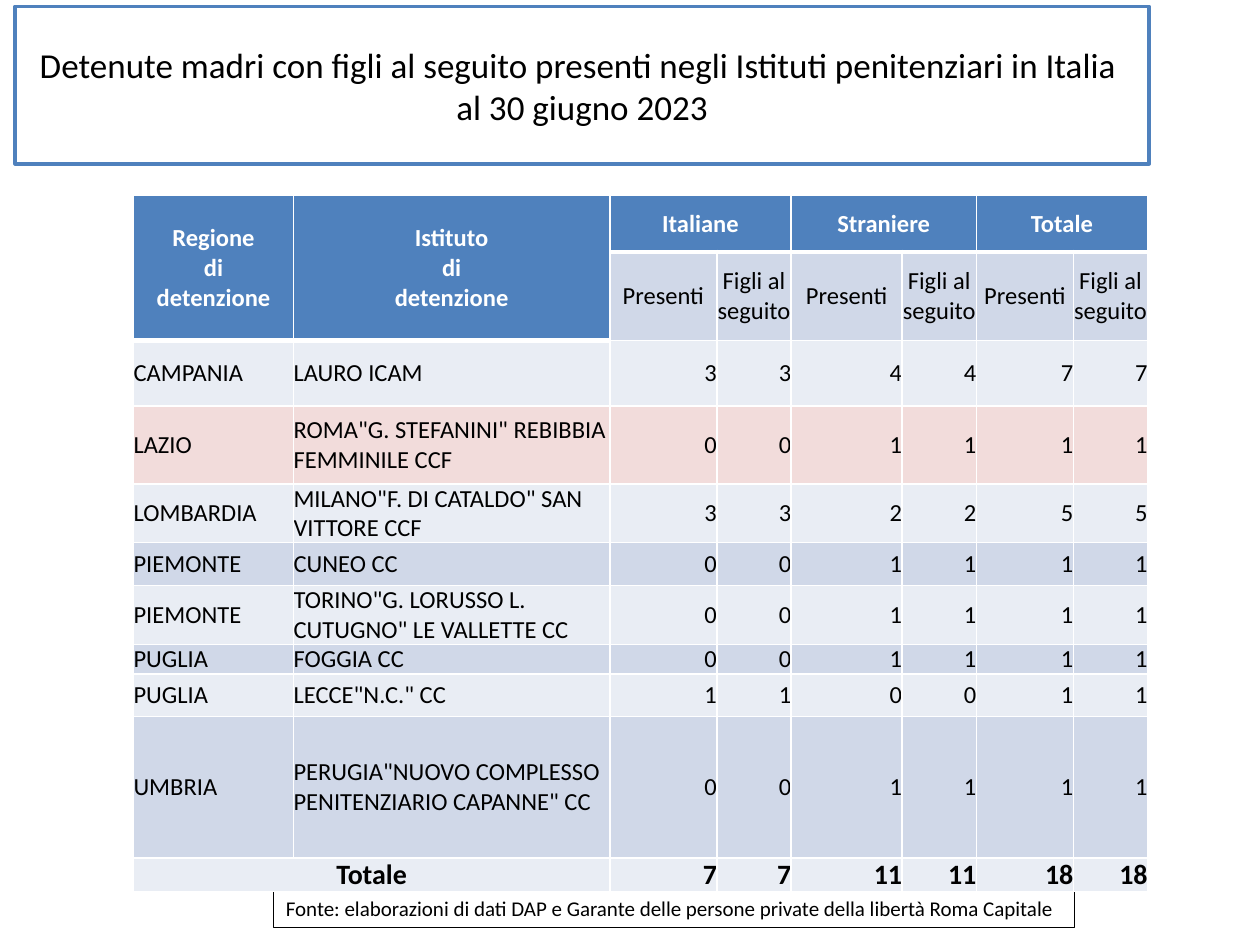
from dataclasses import dataclass

from lxml import etree
from pptx import Presentation
from pptx.dml.color import RGBColor
from pptx.enum.shapes import MSO_SHAPE
from pptx.enum.text import MSO_ANCHOR, MSO_AUTO_SIZE, PP_ALIGN
from pptx.oxml.ns import qn
from pptx.util import Inches, Pt

LEFT, CENTER, RIGHT = PP_ALIGN.LEFT, PP_ALIGN.CENTER, PP_ALIGN.RIGHT
MIDDLE = MSO_ANCHOR.MIDDLE
NO_AUTOFIT, GROW = MSO_AUTO_SIZE.NONE, MSO_AUTO_SIZE.SHAPE_TO_FIT_TEXT
RECTANGLE = MSO_SHAPE.RECTANGLE
TITLE_ONLY = 5


@dataclass(frozen=True)
class Theme:
    """Colours, font and type sizes of the slide."""

    font: str = "Calibri"
    white: str = "FFFFFF"
    black: str = "000000"
    accent: str = "4F81BD"
    light: str = "E9EDF4"
    band: str = "D0D8E8"
    highlight: str = "F2DCDB"
    title: int = 20
    total: int = 16
    body: int = 14
    source: int = 12
    thin: int = 1
    thick: int = 3


THEME = Theme()

TITLE = ("Detenute madri con figli al seguito presenti negli Istituti "
         "penitenziari in Italia \val 30 giugno 2023")
SOURCE = ("Fonte: elaborazioni di dati DAP e Garante delle persone private "
          "della libertà Roma Capitale")
PLACE_HEADINGS = ["Regione\ndi\ndetenzione", "Istituto\ndi\ndetenzione"]
GROUPS = ["Italiane", "Straniere", "Totale"]
MEASURES = ["Presenti", "Figli al seguito"]
PRISONS = [
    ("CAMPANIA", "LAURO ICAM", 3, 3, 4, 4, 7, 7),
    ("LAZIO", 'ROMA"G. STEFANINI" REBIBBIA FEMMINILE CCF', 0, 0, 1, 1, 1, 1),
    ("LOMBARDIA", 'MILANO"F. DI CATALDO" SAN VITTORE CCF', 3, 3, 2, 2, 5, 5),
    ("PIEMONTE", "CUNEO CC", 0, 0, 1, 1, 1, 1),
    ("PIEMONTE", 'TORINO"G. LORUSSO L. CUTUGNO" LE VALLETTE CC', 0, 0, 1, 1, 1, 1),
    ("PUGLIA", "FOGGIA CC", 0, 0, 1, 1, 1, 1),
    ("PUGLIA", 'LECCE"N.C." CC', 1, 1, 0, 0, 1, 1),
    ("UMBRIA", 'PERUGIA"NUOVO COMPLESSO PENITENZIARIO CAPANNE" CC', 0, 0, 1, 1, 1, 1),
]
TOTALS = [7, 7, 11, 11, 18, 18]
HIGHLIGHTED_REGION = "LAZIO"
COLUMN_WIDTHS = [1.27, 2.51, 0.85, 0.59, 0.88, 0.59, 0.77, 0.59]
ROW_HEIGHTS = [0.45, 0.62, 0.52, 0.62, 0.34, 0.34, 0.27, 0.22, 0.34, 1.12, 0.12]


def style_text(text_frame, size, color=THEME.black, bold=False, align=LEFT):
    """Format every run and paragraph of a text frame."""
    for paragraph in text_frame.paragraphs:
        paragraph.alignment = align
        for run in paragraph.runs:
            run.font.name = THEME.font
            run.font.size = Pt(size)
            run.font.bold = bold
            run.font.color.rgb = RGBColor.from_string(color)


def style_box(box, line_color, line_width):
    """Give a box a white fill and a plain outline."""
    box.fill.solid()
    box.fill.fore_color.rgb = RGBColor.from_string(THEME.white)
    box.line.color.rgb = RGBColor.from_string(line_color)
    box.line.width = Pt(line_width)


def place_title(slide):
    """Fill the title placeholder."""
    title = slide.shapes.title
    title.left, title.top = Inches(0.12), Inches(0.05)
    title.width, title.height = Inches(9), Inches(1.25)
    style_box(title, THEME.accent, 2)
    title.text_frame.text = TITLE
    title.text_frame.auto_size = NO_AUTOFIT
    title.text_frame.vertical_anchor = MIDDLE
    style_text(title.text_frame, THEME.title, align=CENTER)


def add_source(slide):
    """Add the boxed source line."""
    source = slide.shapes.add_shape(
        RECTANGLE, Inches(2.17), Inches(7.06), Inches(6.36), Inches(0.3))
    source.shadow.inherit = False
    style_box(source, THEME.black, 0.75)
    source.text_frame.text = SOURCE
    source.text_frame.word_wrap = False
    source.text_frame.auto_size = GROW
    source.text_frame.vertical_anchor = MSO_ANCHOR.TOP
    style_text(source.text_frame, THEME.source)


def rule_below(row, column):
    """Return the width of the rule under a table position."""
    is_header = row == 0 or (row == 1 and column < len(PLACE_HEADINGS))
    return THEME.thick if is_header else THEME.thin


def set_borders(cell, above, below):
    """Draw white rules on the four sides of a cell."""
    properties = cell._tc.get_or_add_tcPr()
    sides = {"a:lnL": THEME.thin, "a:lnR": THEME.thin,
             "a:lnT": above, "a:lnB": below}
    for side, width in sides.items():
        rule = etree.SubElement(properties, qn(side), w=str(Pt(width)))
        fill = etree.SubElement(rule, qn("a:solidFill"))
        etree.SubElement(fill, qn("a:srgbClr"), val=THEME.white)


def fill_cell(cell, content, fill, size=THEME.body, **text_style):
    """Write one cell and set its fill and type."""
    cell.text = str(content)
    cell.fill.solid()
    cell.fill.fore_color.rgb = RGBColor.from_string(fill)
    style_text(cell.text_frame, size, **text_style)


def fill_header(table):
    """Write the two header rows."""
    heading = {"color": THEME.white, "bold": True, "align": CENTER}
    for column, label in enumerate(PLACE_HEADINGS):
        table.cell(0, column).merge(table.cell(1, column))
        fill_cell(table.cell(0, column), label, THEME.accent, **heading)
    for index, group in enumerate(GROUPS):
        first = len(PLACE_HEADINGS) + index * len(MEASURES)
        table.cell(0, first).merge(table.cell(0, first + len(MEASURES) - 1))
        fill_cell(table.cell(0, first), group, THEME.accent, **heading)
        for offset, measure in enumerate(MEASURES):
            fill_cell(table.cell(1, first + offset), measure, THEME.band, align=CENTER)


def fill_prisons(table):
    """Write one banded row per prison."""
    for index, prison in enumerate(PRISONS):
        fill = THEME.band if index % 2 else THEME.light
        if prison[0] == HIGHLIGHTED_REGION:
            fill = THEME.highlight
        for column, content in enumerate(prison):
            align = LEFT if column < len(PLACE_HEADINGS) else RIGHT
            fill_cell(table.cell(index + 2, column), content, fill, align=align)


def fill_totals(table):
    """Write the closing row of totals."""
    last = len(ROW_HEIGHTS) - 1
    total = {"size": THEME.total, "bold": True}
    table.cell(last, 0).merge(table.cell(last, 1))
    fill_cell(table.cell(last, 0), "Totale", THEME.light, align=CENTER, **total)
    for column, value in enumerate(TOTALS, start=len(PLACE_HEADINGS)):
        fill_cell(table.cell(last, column), value, THEME.light, align=RIGHT, **total)


def add_prison_table(slide):
    """Add the table of mothers and children by prison."""
    table = slide.shapes.add_table(
        len(ROW_HEIGHTS), len(COLUMN_WIDTHS), Inches(1.06), Inches(1.55),
        Inches(sum(COLUMN_WIDTHS)), Inches(sum(ROW_HEIGHTS))).table
    for column, width in zip(table.columns, COLUMN_WIDTHS):
        column.width = Inches(width)
    for row, height in zip(table.rows, ROW_HEIGHTS):
        row.height = Inches(height)
    for row in range(len(ROW_HEIGHTS)):
        for column in range(len(COLUMN_WIDTHS)):
            cell = table.cell(row, column)
            cell.vertical_anchor = MIDDLE
            cell.margin_left = cell.margin_right = 0
            cell.margin_top = cell.margin_bottom = 0
            above = rule_below(row - 1, column) if row else THEME.thin
            set_borders(cell, above, rule_below(row, column))
    fill_header(table)
    fill_prisons(table)
    fill_totals(table)


def main():
    """Build and save the slide."""
    deck = Presentation()
    deck.slide_width, deck.slide_height = Inches(10), Inches(7.5)
    slide = deck.slides.add_slide(deck.slide_layouts[TITLE_ONLY])
    place_title(slide)
    add_source(slide)
    add_prison_table(slide)
    deck.save("out.pptx")


if __name__ == "__main__":
    main()
